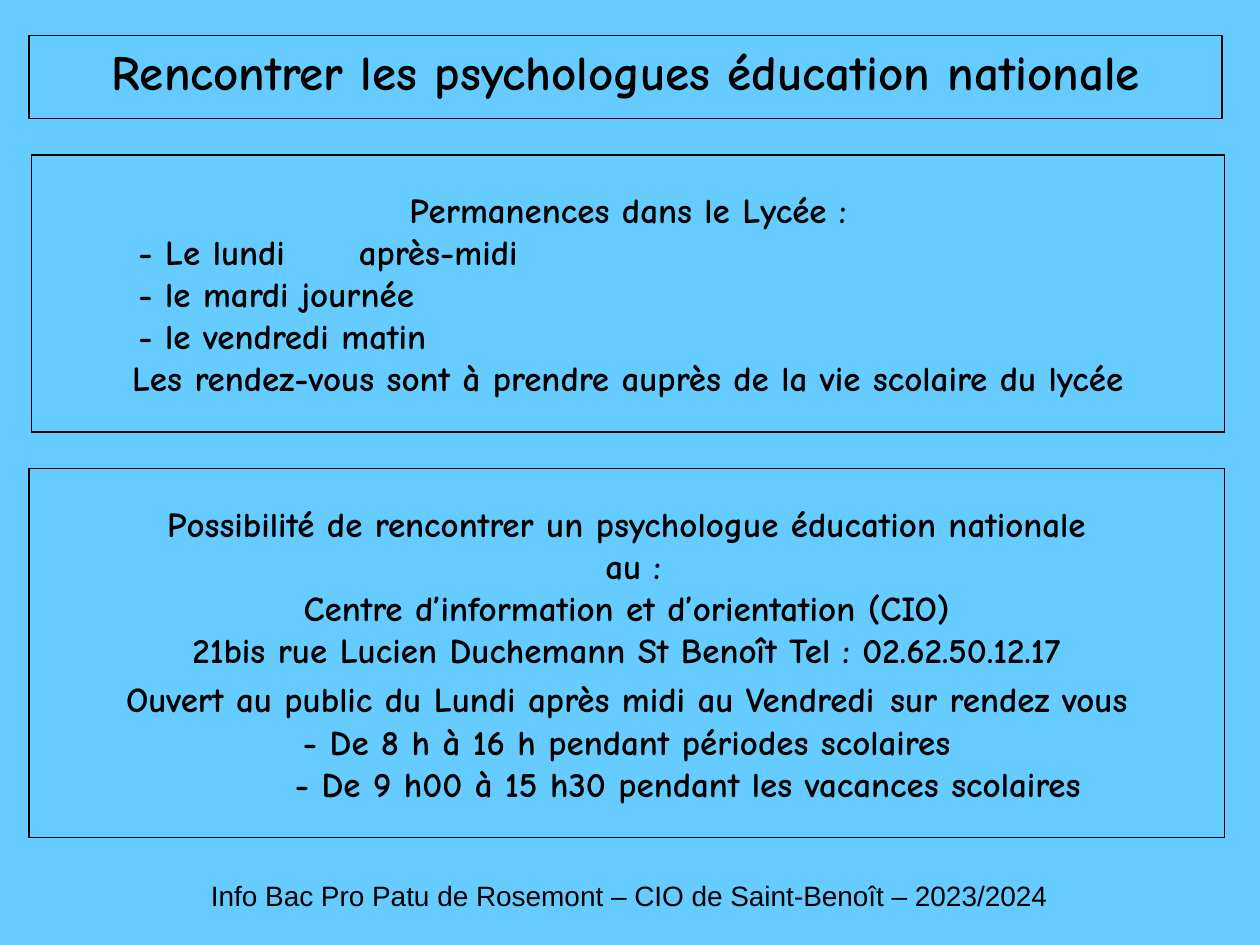
from dataclasses import dataclass

from lxml.etree import SubElement
from pptx import Presentation
from pptx.dml.color import RGBColor
from pptx.enum.shapes import MSO_SHAPE as Shape
from pptx.enum.text import MSO_ANCHOR as Anchor, PP_ALIGN as Align
from pptx.oxml.ns import qn
from pptx.util import Inches, Pt

COLOURS = {"sky": "66CCFF", "ink": "000000"}
HAND_FONT = "Comic Neue"
FOOTER_FONT = "Arial"


@dataclass
class Line:
    """One paragraph; sizes holds exceptions to the panel's size, by run."""
    runs: tuple[str, ...]
    align: Align = Align.CENTER
    margin: float = 0
    first_indent: float = 0
    tab: float = 0
    sizes: tuple[int, ...] = ()


@dataclass
class Panel:
    left: float
    top: float
    width: float
    height: float
    size: int
    lines: list[Line]
    anchor: Anchor = Anchor.MIDDLE


def schedule(text: str) -> Line:
    return Line((text,), Align.LEFT, first_indent=0.75, tab=3)


def colour(name: str) -> RGBColor:
    return RGBColor.from_string(COLOURS[name])


def write_lines(frame, lines: list[Line], size: int, font: str, bold: bool) -> None:
    frame.word_wrap = True
    for index, line in enumerate(lines):
        paragraph = frame.add_paragraph() if index else frame.paragraphs[0]
        paragraph.alignment = line.align
        properties = paragraph._p.get_or_add_pPr()
        properties.set("marL", str(Inches(line.margin)))
        properties.set("indent", str(Inches(line.first_indent)))
        if line.tab:
            stops = SubElement(properties, qn("a:tabLst"))
            SubElement(stops, qn("a:tab"), pos=str(Inches(line.tab)), algn="l")
        run_sizes = line.sizes or (size,) * len(line.runs)
        for text, run_size in zip(line.runs, run_sizes):
            run = paragraph.add_run()
            run.text = text
            run.font.name = font
            run.font.size = Pt(run_size)
            run.font.bold = bold
            run.font.color.rgb = colour("ink")


def draw_panel(slide, panel: Panel) -> None:
    frame_box = slide.shapes.add_shape(
        Shape.RECTANGLE, Inches(panel.left), Inches(panel.top),
        Inches(panel.width), Inches(panel.height))
    frame_box.shadow.inherit = False
    frame_box.fill.background()
    frame_box.line.color.rgb = colour("ink")
    frame_box.line.width = Pt(0.75)
    frame_box.text_frame.vertical_anchor = panel.anchor
    write_lines(frame_box.text_frame, panel.lines, panel.size, HAND_FONT, True)


PANELS = [
    # Title
    Panel(0.23, 0.28, 9.47, 0.66, 28, [
        Line(("Rencontrer les psychologues éducation nationale",)),
    ], Anchor.TOP),
    # Sessions at the school
    Panel(0.25, 1.23, 9.47, 2.2, 20, [
        Line(("Permanences dans le Lycée :",)),
        schedule("- Le lundi \taprès-midi"),
        schedule("- le mardi journée"),
        schedule("- le vendredi matin"),
        Line(("Les rendez-vous sont à prendre auprès de la vie scolaire du lycée",)),
    ]),
    # Guidance centre
    Panel(0.23, 3.72, 9.49, 2.93, 20, [
        Line(("Possibilité de rencontrer un psychologue éducation nationale",)),
        Line(("au :",), margin=0.1),
        Line(("Centre d’information et d’orientation (CIO)",)),
        Line(("21bis rue Lucien Duchemann St Benoît Tel : 02.62.50.12.17",)),
        Line(("Ouvert au public du Lundi après midi au Vendredi", " ",
              "sur rendez vous"), sizes=(20, 24, 20)),
        Line(("- De 8 h à 16 h pendant périodes scolaires",)),
        Line(("- De 9 h00 à 15 h30 pendant les vacances scolaires",), margin=0.97),
    ]),
]


def main() -> None:
    deck = Presentation()
    deck.slide_width, deck.slide_height = Inches(10), Inches(7.5)
    slide = deck.slides.add_slide(deck.slide_layouts[6])
    slide.background.fill.solid()
    slide.background.fill.fore_color.rgb = colour("sky")

    for panel in PANELS:
        draw_panel(slide, panel)

    # Footer
    footer = slide.shapes.add_textbox(
        Inches(1.06), Inches(6.92), Inches(7.87), Inches(0.36))
    write_lines(footer.text_frame, [
        Line(("Info Bac Pro Patu de Rosemont – CIO de Saint-Benoît – 2023/2024",)),
    ], 16, FOOTER_FONT, False)

    deck.save("out.pptx")


if __name__ == "__main__":
    main()
